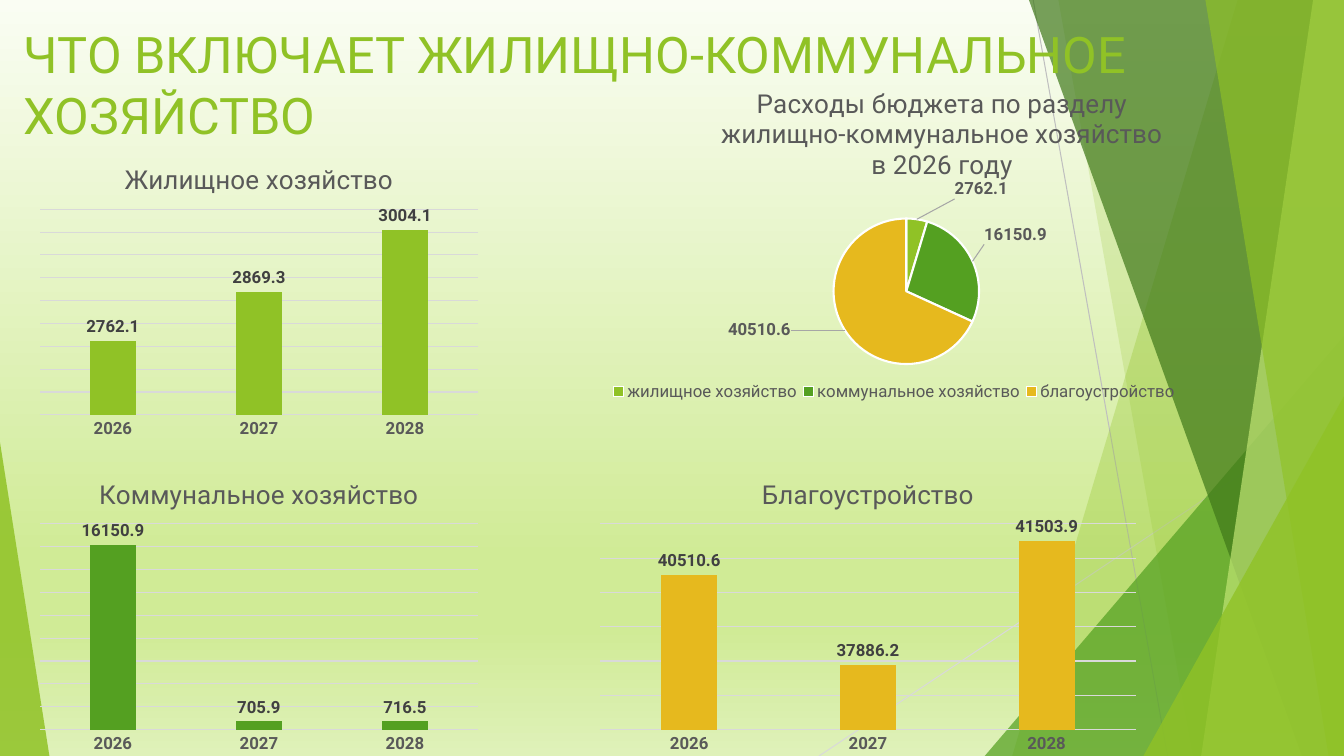
from lxml import etree
from pptx import Presentation
from pptx.chart.data import CategoryChartData
from pptx.dml.color import RGBColor
from pptx.enum.chart import XL_CHART_TYPE, XL_LABEL_POSITION, XL_LEGEND_POSITION, XL_TICK_MARK
from pptx.enum.shapes import MSO_CONNECTOR, MSO_SHAPE
from pptx.enum.text import MSO_ANCHOR
from pptx.oxml.ns import qn
from pptx.util import Pt

COLUMN, PIE = XL_CHART_TYPE.COLUMN_CLUSTERED, XL_CHART_TYPE.PIE
OUTSIDE = XL_LABEL_POSITION.OUTSIDE_END
BOTTOM = XL_LEGEND_POSITION.BOTTOM
NO_TICK = XL_TICK_MARK.NONE
STRAIGHT = MSO_CONNECTOR.STRAIGHT
TRIANGLE = MSO_SHAPE.ISOSCELES_TRIANGLE
TOP = MSO_ANCHOR.TOP

COLOURS = {
    "lime": "90C226", "green": "54A021", "forest": "3F7819", "pale": "C0E474",
    "gold": "E6B91E", "text": "595959", "value": "404040", "grid": "D9D9D9",
    "ray": "BFBFBF", "leader": "A6A6A6", "white": "FFFFFF",
    "sky": "FAFDF3", "meadow": "D0EB96", "ground": "DFF1B9",
}
RGB = {name: RGBColor.from_string(code) for name, code in COLOURS.items()}


def style(font, size, colour, bold=False):
    font.name = "Roboto"
    font.size = Pt(size)
    font.bold = bold
    font.color.rgb = RGB[colour]


def place(parent, index, **settings):
    for old in parent.findall(qn("c:layout")):
        parent.remove(old)
    layout = etree.Element(qn("c:layout"))
    manual = etree.SubElement(layout, qn("c:manualLayout"))
    for name, value in settings.items():
        etree.SubElement(manual, qn(f"c:{name}")).set("val", str(value))
    parent.insert(index, layout)


presentation = Presentation()
presentation.slide_width, presentation.slide_height = Pt(960), Pt(540)
slide = presentation.slides.add_slide(presentation.slide_layouts[6])

background = slide.background.fill
background.gradient()
background.gradient_angle = 270
stops = slide.element.find(".//" + qn("a:gsLst"))
for stop in list(stops):
    stops.remove(stop)
for position, colour in ((0, "sky"), (74, "meadow"), (83, "meadow"), (100, "ground")):
    stop = etree.SubElement(stops, qn("a:gs"), pos=str(position * 1000))
    etree.SubElement(stop, qn("a:srgbClr"), val=COLOURS[colour])

for ends, colour in (((738, 0, 834, 540), "ray"), ((960, 290, 585, 540), "grid")):
    ray = slide.shapes.add_connector(STRAIGHT, *map(Pt, ends))
    ray.line.color.rgb = RGB[colour]
    ray.line.width = Pt(0.75)
    etree.SubElement(ray.element.spPr, qn("a:effectLst"))

facets = [
    ((884, 723), "lime", 30),
    ((756, 852), "lime", 20),
    ((703.4, 240, 256.6, 300, 1), "green", 72),
    ((735, 929.5), "forest", 70),
    ((938, 858), "pale", 70),
    ((861, 949), "lime", 65),
    ((816.7, 283, 143.3, 257, 1), "lime", 80),
    ((0, 316, 35.3, 224, 0), "lime", 85),
]
for geometry, colour, opacity in facets:
    if len(geometry) == 2:
        top_x, bottom_x = geometry
        builder = slide.shapes.build_freeform(top_x, 0, scale=Pt(1))
        builder.add_line_segments([(960, 0), (960, 540), (bottom_x, 540)], close=True)
        facet = builder.convert_to_shape()
    else:
        facet = slide.shapes.add_shape(TRIANGLE, *map(Pt, geometry[:4]))
        facet.adjustments[0] = geometry[4]
    facet.shadow.inherit = False
    facet.line.fill.background()
    facet.fill.solid()
    facet.fill.fore_color.rgb = RGB[colour]
    paint = facet.element.spPr.find(qn("a:solidFill"))[0]
    etree.SubElement(paint, qn("a:alpha"), val=str(opacity * 1000))

heading = slide.shapes.add_textbox(Pt(10), Pt(13), Pt(928), Pt(104))
heading.text_frame.word_wrap = True
heading.text_frame.vertical_anchor = TOP
heading.text_frame.text = "ЧТО ВКЛЮЧАЕТ ЖИЛИЩНО-КОММУНАЛЬНОЕ ХОЗЯЙСТВО"
style(heading.text_frame.paragraphs[0].runs[0].font, 36, "lime")

YEARS = ["2026", "2027", "2028"]
SECTIONS = ["жилищное хозяйство", "коммунальное хозяйство", "благоустройство"]
charts = [
    (PIE, "Расходы бюджета по разделу\nжилищно-коммунальное хозяйство\nв 2026 году",
     (420.5, 54.7, 440.6, 260), SECTIONS, [2762.1, 16150.9, 40510.6], None, None),
    (COLUMN, "Жилищное хозяйство",
     (22, 104.7, 326, 213), YEARS, [2762.1, 2869.3, 3004.1], "lime", (2600, 3050, 50)),
    (COLUMN, "Коммунальное хозяйство",
     (22, 329.5, 326, 213), YEARS, [16150.9, 705.9, 716.5], "green", (0, 18000, 2000)),
    (COLUMN, "Благоустройство",
     (420.5, 329.5, 399, 213), YEARS, [40510.6, 37886.2, 41503.9], "gold", (36000, 42000, 1000)),
]
slices = [("lime", 0.06, -0.04), ("green", 0.01, -0.04), ("gold", -0.08, -0.04)]

for kind, title, frame, categories, values, colour, scale in charts:
    data = CategoryChartData()
    data.categories = categories
    data.add_series(title if kind == COLUMN else "Расходы", values)
    chart = slide.shapes.add_chart(kind, *map(Pt, frame), data).chart
    chart.font.name = "Roboto"
    chart.font.size = Pt(10)
    chart.has_title = True
    chart.chart_title.text_frame.text = title
    for paragraph in chart.chart_title.text_frame.paragraphs:
        style(paragraph.runs[0].font, 18.6, "text")
    plot = chart.plots[0]
    plot.vary_by_categories = kind == PIE
    series = plot.series[0]
    labels = series.data_labels
    labels.show_value = True
    labels.position = OUTSIDE
    style(labels.font, 12, "text" if kind == PIE else "value", True)
    plot_area = chart.element.find(".//" + qn("c:plotArea"))
    chart.has_legend = kind == PIE

    if kind == PIE:
        place(chart.element.find(".//" + qn("c:title")), 1,
              xMode="edge", yMode="edge", x=0.21, y=0.02)
        place(plot_area, 0, layoutTarget="inner", xMode="edge", yMode="edge",
              x=0.03, y=0.39, w=0.97, h=0.4)
        chart.legend.position = BOTTOM
        chart.legend.include_in_layout = False
        style(chart.legend.font, 12, "text")
        place(chart.element.find(".//" + qn("c:legend")), 1,
              xMode="edge", yMode="edge", x=0.03, y=0.83, w=0.93, h=0.07)
        for index, (slice_colour, shift_x, shift_y) in enumerate(slices):
            point = series.points[index]
            point.format.fill.solid()
            point.format.fill.fore_color.rgb = RGB[slice_colour]
            point.format.line.color.rgb = RGB["white"]
            point.format.line.width = Pt(1.5)
            point.data_label.position = OUTSIDE
            style(point.data_label.font, 12, "text", True)
            place(chart.element.findall(".//" + qn("c:dLbl"))[index], 1, x=shift_x, y=shift_y)
        leader = chart.element.find(".//" + qn("c:showLeaderLines"))
        if leader is not None:
            leader.set("val", "1")
            leader_lines = etree.Element(qn("c:leaderLines"))
            leader.addnext(leader_lines)
            outline = etree.SubElement(etree.SubElement(leader_lines, qn("c:spPr")), qn("a:ln"), w=str(Pt(0.75)))
            etree.SubElement(etree.SubElement(outline, qn("a:solidFill")), qn("a:srgbClr"), val=COLOURS["leader"])
    else:
        place(plot_area, 0, layoutTarget="inner", xMode="edge", yMode="edge",
              x=0.02, y=0.21, w=0.96, h=0.69)
        plot.gap_width, plot.overlap = 219, -27
        series.format.fill.solid()
        series.format.fill.fore_color.rgb = RGB[colour]
        value_axis, category_axis = chart.value_axis, chart.category_axis
        value_axis.minimum_scale, value_axis.maximum_scale, value_axis.major_unit = scale
        value_axis.visible = False
        category_axis.major_tick_mark = NO_TICK
        category_axis.minor_tick_mark = NO_TICK
        style(category_axis.tick_labels.font, 12, "text", True)
        for line in (value_axis.major_gridlines.format.line, category_axis.format.line):
            line.color.rgb = RGB["grid"]
            line.width = Pt(0.75)

presentation.save("out.pptx")
